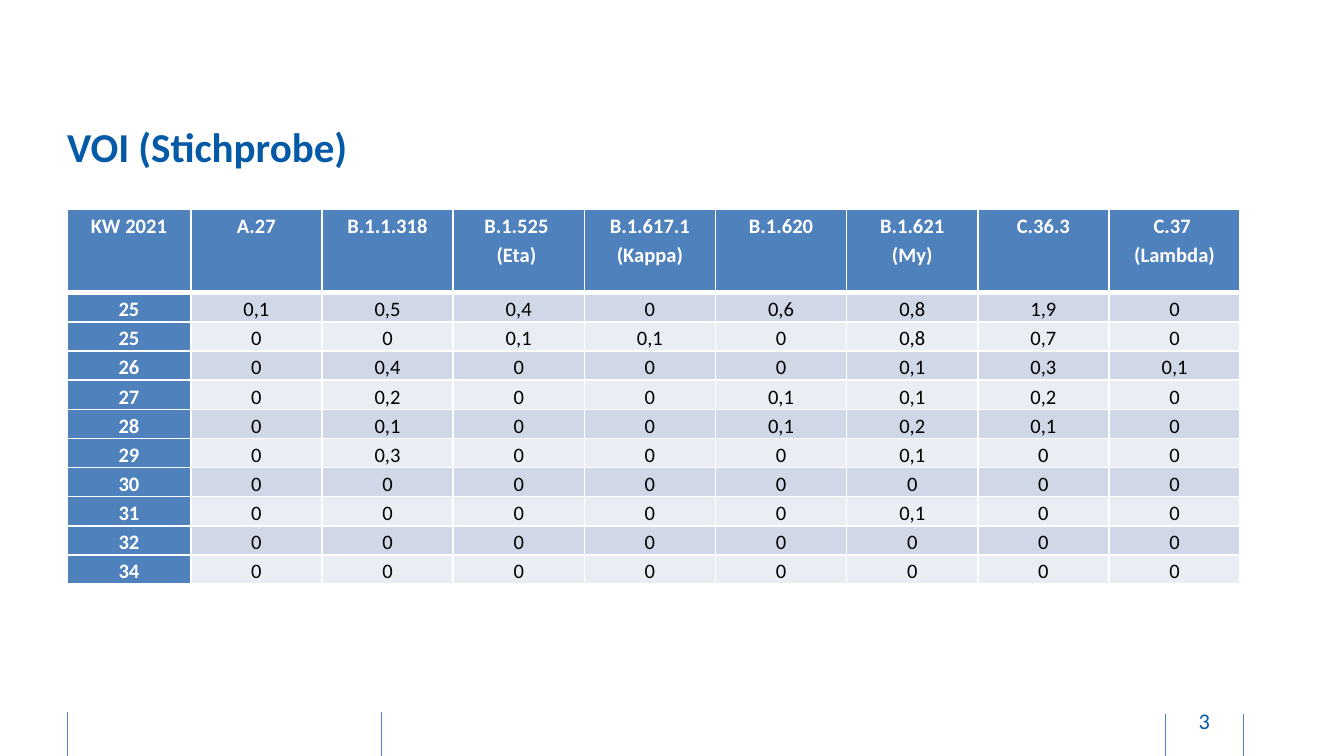
"""Build the slide with the table of sampled virus variants of interest."""
from lxml.etree import SubElement
from pptx import Presentation
from pptx.dml.color import RGBColor
from pptx.enum.shapes import MSO_CONNECTOR
from pptx.enum.text import MSO_ANCHOR, PP_ALIGN
from pptx.oxml.ns import qn
from pptx.util import Inches, Pt

WHITE = RGBColor(0xFF, 0xFF, 0xFF)
BLACK = RGBColor(0, 0, 0)
NAVY = RGBColor(0x04, 0x5A, 0xA6)
BLUE = RGBColor(0x4F, 0x81, 0xBD)
BANDS = [RGBColor(0xD0, 0xD8, 0xE8), RGBColor(0xE9, 0xED, 0xF4)]
FONT = "Calibri"

TITLE = "VOI (Stichprobe)"
PAGE = "3"
HEADER = ["KW 2021", "A.27\v", "B.1.1.318", "B.1.525 \v(Eta) \v", "B.1.617.1 (Kappa)",
          "B.1.620", "B.1.621\v(My)", "C.36.3", "C.37 \v(Lambda)"]
ROWS = [
    ["25", "0,1", "0,5", "0,4", "0", "0,6", "0,8", "1,9", "0"],
    ["25", "0", "0", "0,1", "0,1", "0", "0,8", "0,7", "0"],
    ["26", "0", "0,4", "0", "0", "0", "0,1", "0,3", "0,1"],
    ["27", "0", "0,2", "0", "0", "0,1", "0,1", "0,2", "0"],
    ["28", "0", "0,1", "0", "0", "0,1", "0,2", "0,1", "0"],
    ["29", "0", "0,3", "0", "0", "0", "0,1", "0", "0"],
    ["30", "0", "0", "0", "0", "0", "0", "0", "0"],
    ["31", "0", "0", "0", "0", "0", "0,1", "0", "0"],
    ["32", "0", "0", "0", "0", "0", "0", "0", "0"],
    ["34", "0", "0", "0", "0", "0", "0", "0", "0"],
]
FOOTER_LINES = [(8.67, 5.31), (2.84, 5.3), (0.5, 5.3), (9.25, 5.31)]
LINE_HEIGHT = 0.34
LEFT, TOP, WIDTH = 0.5, 1.56, 8.73
WEEK_WIDTH, HEADER_HEIGHT, ROW_HEIGHT = 0.92, 0.62, 0.2


def style(p, size, color, bold=False, align=PP_ALIGN.CENTER):
    p.alignment = align
    p.font.name, p.font.size = FONT, Pt(size)
    p.font.bold, p.font.color.rgb = bold, color


def add_text(s, text, box, inset, *font):
    tf = s.shapes.add_textbox(*map(Inches, box)).text_frame
    tf.word_wrap = True
    tf.vertical_anchor = MSO_ANCHOR.MIDDLE
    tf.margin_left = tf.margin_right = 0
    tf.margin_top = tf.margin_bottom = Inches(inset)
    tf.text = text
    style(tf.paragraphs[0], *font)


def add_footer_line(s, x, y):
    line = s.shapes.add_connector(MSO_CONNECTOR.STRAIGHT, Inches(x), Inches(y),
                                  Inches(x), Inches(y + LINE_HEIGHT))
    line.line.color.rgb, line.line.width = BLUE, Pt(0.5)
    SubElement(line._element.spPr, qn("a:effectLst"))


def set_borders(cell, **widths):
    tcPr = cell._tc.get_or_add_tcPr()
    for side in "LRTB":
        ln = SubElement(tcPr, qn(f"a:ln{side}"), w=str(Pt(widths.get(side, 1))))
        fill = SubElement(ln, qn("a:solidFill"))
        SubElement(fill, qn("a:srgbClr"), val=str(WHITE))


def fill_cell(cell, text, row, col):
    heading = row == 0 or col == 0
    cell.margin_left = cell.margin_right = Inches(0.05)
    cell.margin_top = cell.margin_bottom = Pt(0.2)
    if row == 0:
        cell.vertical_anchor = MSO_ANCHOR.TOP
    else:
        cell.vertical_anchor = MSO_ANCHOR.MIDDLE if col == 0 else MSO_ANCHOR.BOTTOM
    set_borders(cell, **{0: {"B": 3}, 1: {"T": 3}}.get(row, {}))
    cell.fill.solid()
    cell.fill.fore_color.rgb = BLUE if heading else BANDS[(row - 1) % 2]
    cell.text = text
    p = cell.text_frame.paragraphs[0]
    p.line_spacing = 1.15
    style(p, 11, WHITE if heading else BLACK, heading)


def add_variant_table(s):
    data = [HEADER] + ROWS
    height = HEADER_HEIGHT + ROW_HEIGHT * len(ROWS)
    table = s.shapes.add_table(len(data), len(HEADER), Inches(LEFT), Inches(TOP),
                               Inches(WIDTH), Inches(height)).table
    variant_width = (WIDTH - WEEK_WIDTH) / (len(HEADER) - 1)
    for i, column in enumerate(table.columns):
        column.width = Inches(variant_width if i else WEEK_WIDTH)
    for i, values in enumerate(data):
        table.rows[i].height = Inches(ROW_HEIGHT if i else HEADER_HEIGHT)
        for j, text in enumerate(values):
            fill_cell(table.cell(i, j), text, i, j)


def main():
    prs = Presentation()
    prs.slide_width = Inches(10)
    prs.slide_height = prs.slide_width * 9 // 16
    s = prs.slides.add_slide(prs.slide_layouts[6])
    for x, y in FOOTER_LINES:
        add_footer_line(s, x, y)
    add_text(s, PAGE, (8.69, 5.21, 0.54, 0.3), 0.05, 12, NAVY)
    add_text(s, TITLE, (LEFT, 0.7, WIDTH, 0.78), 0, 22, NAVY, True, PP_ALIGN.LEFT)
    add_variant_table(s)
    prs.save("out.pptx")


if __name__ == "__main__":
    main()
